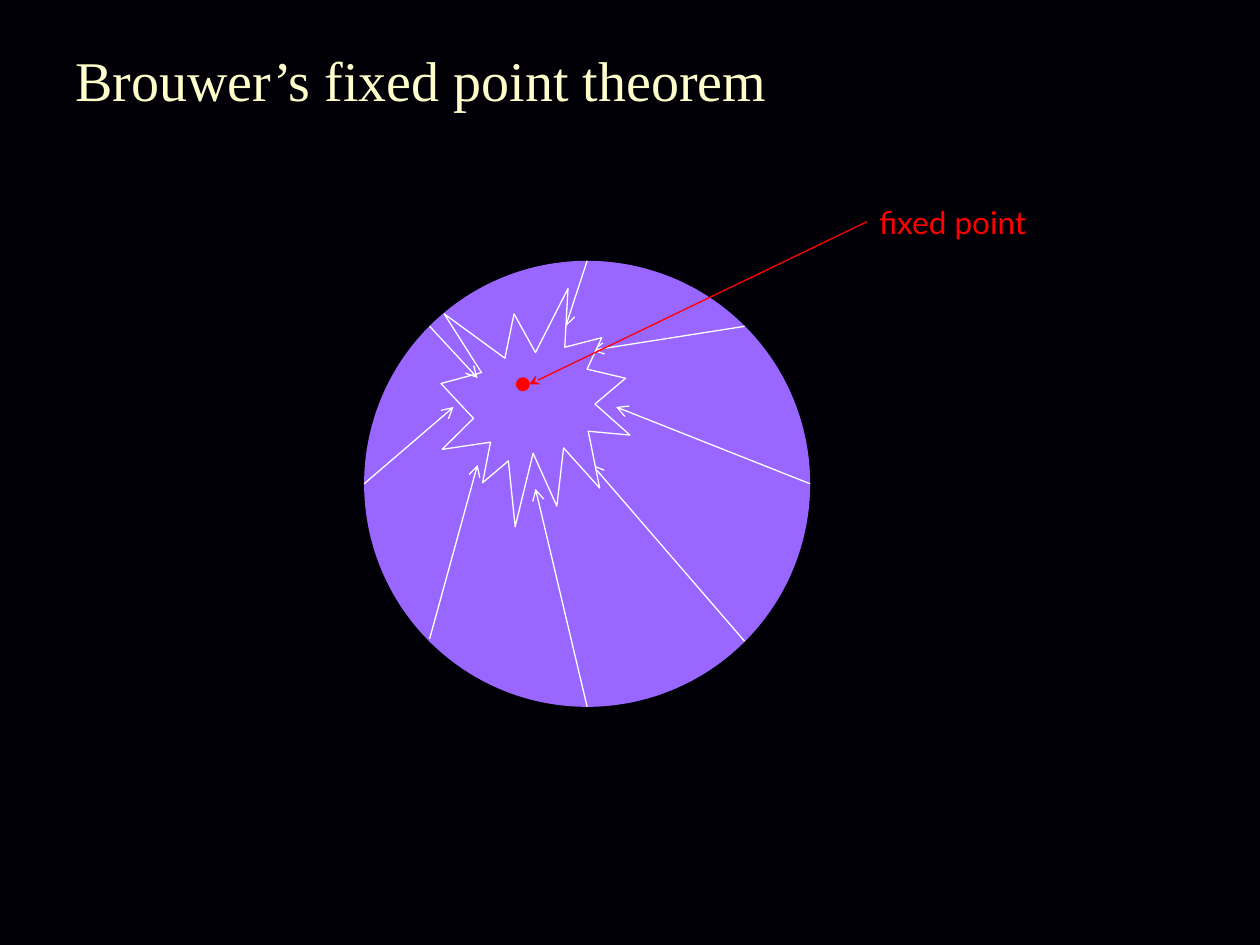
import pptx
import pptx.util
import pptx.dml.color
import pptx.enum.shapes
import pptx.enum.text
import pptx.oxml
import pptx.oxml.ns

Inches = pptx.util.Inches
RGB = pptx.dml.color.RGBColor
SHAPE = pptx.enum.shapes.MSO_SHAPE
ANCHOR = pptx.enum.text.MSO_ANCHOR

NIGHT = RGB(0x01, 0x00, 0x06)
VIOLET = RGB(0x99, 0x66, 0xFF)
CREAM = RGB(0xFF, 0xFF, 0xCC)
WHITE = RGB(0xFF, 0xFF, 0xFF)
RED = RGB(0xFF, 0x00, 0x00)

TITLE = ("Brouwer’s fixed point theorem", (0.5, 0, 6.52, 1.25), "Times New Roman", 32, CREAM)
LABEL = ("fixed point", (6.88, 1.56, 1.37, 0.4), "Lato", 18, RED)
DISK = (2.89, 2.07, 3.54, 3.54)
IMAGE_OF_DISK = (3.5, 2.29, 1.5, 1.89)
FIXED_POINT = (4.1, 3, 0.1, 0.1)
POINTER = ((4.2, 3.05), (6.88, 1.76))
MAPPINGS = [
    ((2.89, 3.84), (3.6, 3.23)),
    ((3.41, 5.07), (3.79, 3.69)),
    ((4.66, 5.61), (4.25, 3.88)),
    ((5.91, 5.09), (4.7, 3.69)),
    ((5.91, 2.59), (4.7, 2.78)),
    ((6.43, 3.84), (4.89, 3.23)),
    ((4.66, 2.07), (4.49, 2.59)),
]
TOP_MAPPING = ((3.41, 2.59), (3.79, 3))


def add_figure(slide, preset, box, fill, outline=None):
    figure = slide.shapes.add_shape(preset, *map(Inches, box))
    figure.shadow.inherit = False
    figure.fill.solid()
    figure.fill.fore_color.rgb = fill
    if outline is None:
        figure.line.fill.background()
    else:
        figure.line.color.rgb = outline
        figure.line.width = pptx.util.Pt(0.75)


def add_arrow(slide, ends, color=WHITE, end_tag="a:tailEnd", head="arrow"):
    points = [Inches(value) for point in ends for value in point]
    arrow = slide.shapes.add_connector(pptx.enum.shapes.MSO_CONNECTOR.STRAIGHT, *points)
    arrow.line.color.rgb = color
    arrow.line.width = pptx.util.Pt(0.75)
    tip = pptx.oxml.ns.qn(end_tag)
    arrow.line._get_or_add_ln().append(arrow._element.makeelement(tip, {"type": head}))
    effects = pptx.oxml.ns.qn("a:effectLst")
    arrow._element.spPr.append(arrow._element.makeelement(effects, {}))


def add_text(slide, content, wrap, anchor):
    words, box, font, size, color = content
    frame = slide.shapes.add_textbox(*map(Inches, box)).text_frame
    frame.word_wrap = wrap
    frame.vertical_anchor = anchor
    run = frame.paragraphs[0].add_run()
    run.text = words
    run.font.name = font
    run.font.size = pptx.util.Pt(size)
    run.font.color.rgb = color
    return frame


def main():
    deck = pptx.Presentation()
    deck.slide_width, deck.slide_height = Inches(10), Inches(7.5)
    slide = deck.slides.add_slide(deck.slide_layouts[6])
    slide.background.fill.solid()
    slide.background.fill.fore_color.rgb = NIGHT

    add_figure(slide, SHAPE.OVAL, DISK, VIOLET)
    add_text(slide, TITLE, True, ANCHOR.MIDDLE)
    for mapping in MAPPINGS:
        add_arrow(slide, mapping)
    add_figure(slide, SHAPE.EXPLOSION1, IMAGE_OF_DISK, VIOLET, WHITE)
    add_arrow(slide, POINTER, RED, "a:headEnd", "stealth")
    label = add_text(slide, LABEL, False, ANCHOR.TOP)
    label.auto_size = pptx.enum.text.MSO_AUTO_SIZE.SHAPE_TO_FIT_TEXT
    add_figure(slide, SHAPE.OVAL, FIXED_POINT, RED, RED)
    add_arrow(slide, TOP_MAPPING)
    deck.save("out.pptx")


if __name__ == "__main__":
    main()
